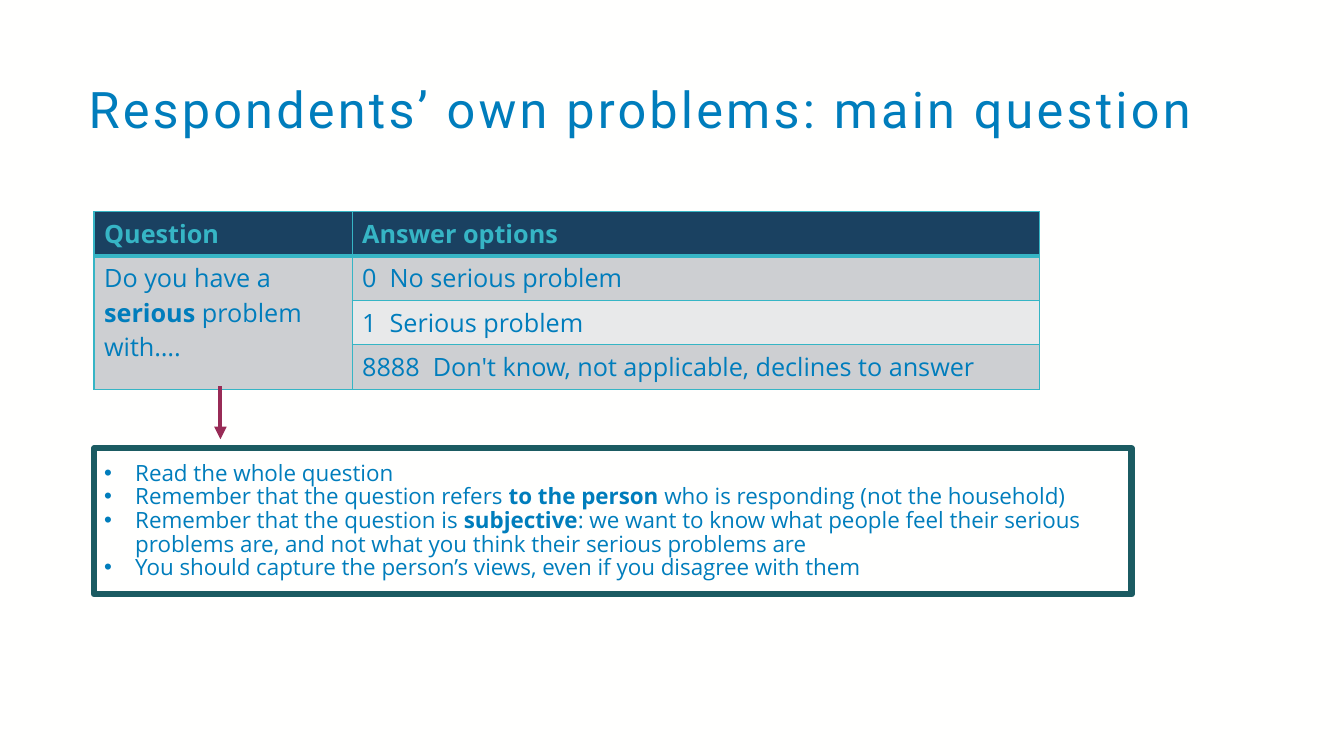
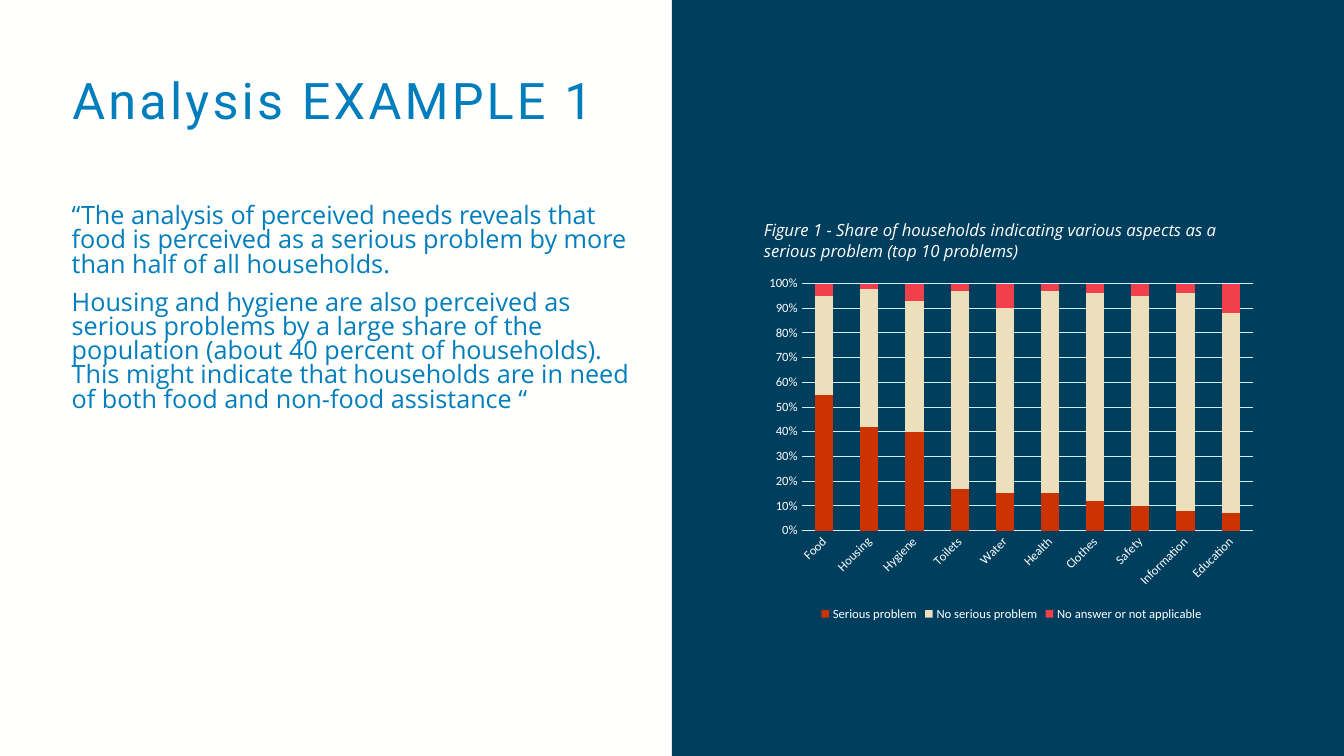
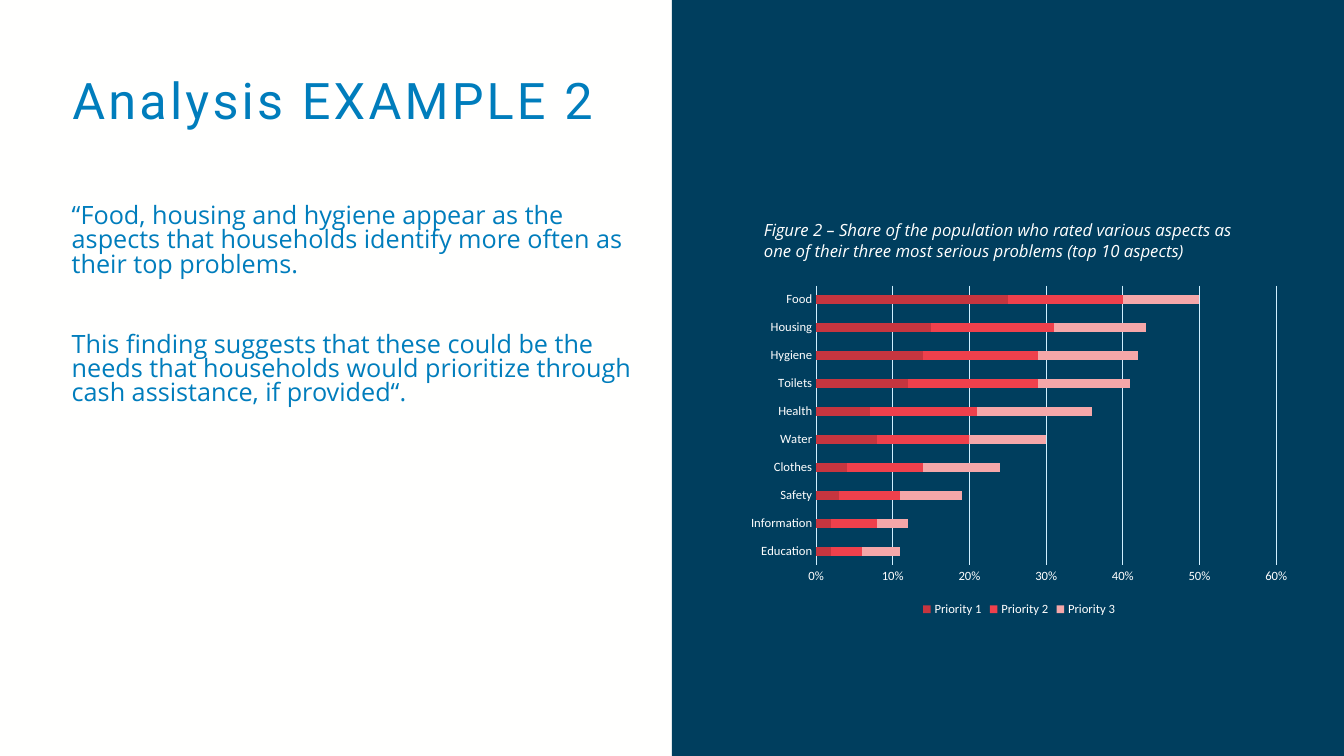
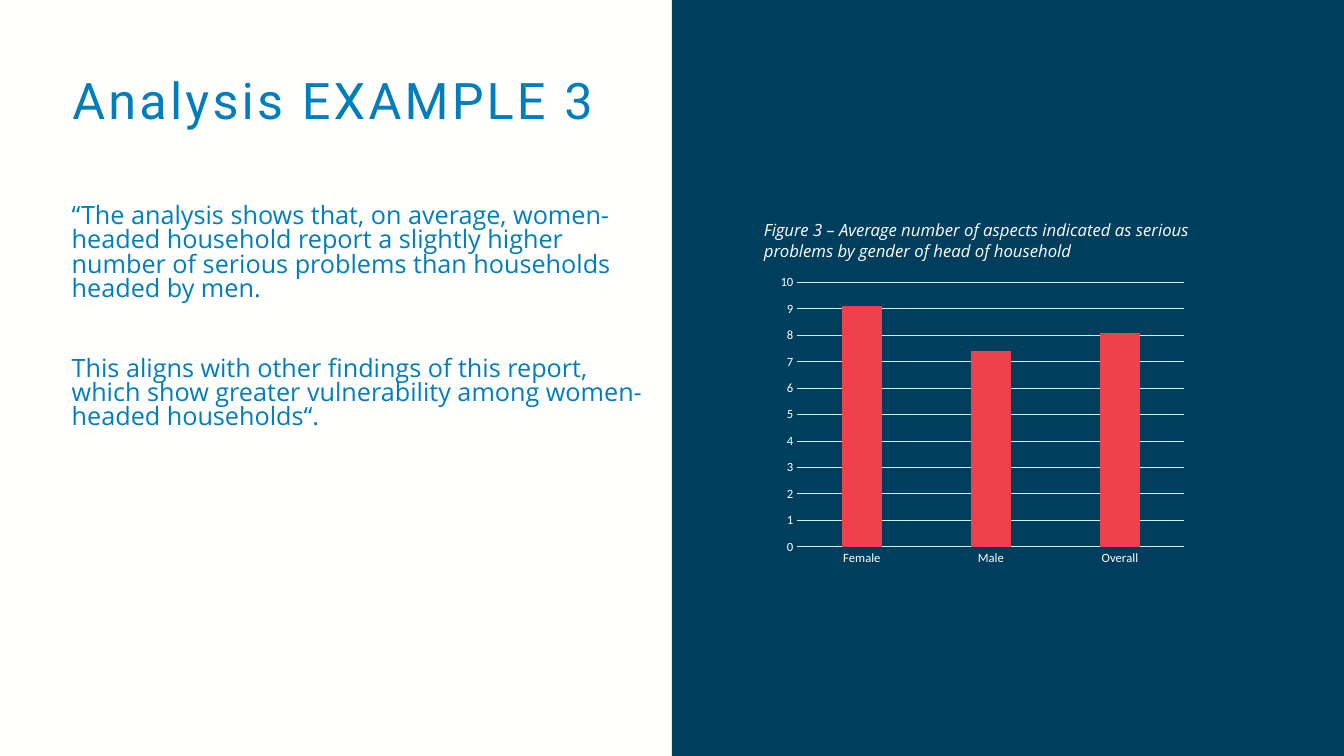
from lxml import etree
from pptx import Presentation
from pptx.chart.data import CategoryChartData
from pptx.dml.color import RGBColor
from pptx.enum.chart import XL_CHART_TYPE, XL_LEGEND_POSITION, XL_TICK_MARK
from pptx.enum.shapes import MSO_CONNECTOR, MSO_SHAPE
from pptx.enum.text import MSO_ANCHOR, PP_ALIGN
from pptx.oxml.ns import qn
from pptx.util import Inches, Pt

COLUMN_STACKED = XL_CHART_TYPE.COLUMN_STACKED
BAR_STACKED = XL_CHART_TYPE.BAR_STACKED
COLUMN_CLUSTERED = XL_CHART_TYPE.COLUMN_CLUSTERED
LEGEND_BOTTOM = XL_LEGEND_POSITION.BOTTOM
NO_TICK = XL_TICK_MARK.NONE
RECT = MSO_SHAPE.RECTANGLE
STRAIGHT = MSO_CONNECTOR.STRAIGHT
TOP, MIDDLE = MSO_ANCHOR.TOP, MSO_ANCHOR.MIDDLE
LEFT = PP_ALIGN.LEFT

PAPER = RGBColor(0xFF, 0xFF, 0xFE)
WHITE = RGBColor(0xFF, 0xFF, 0xFF)
BLUE = RGBColor(0x00, 0x7D, 0xBC)
NAVY = RGBColor(0x00, 0x3E, 0x5E)
HEADER = RGBColor(0x1A, 0x41, 0x61)
TEAL = RGBColor(0x36, 0xB5, 0xC5)
DARK_TEAL = RGBColor(0x1B, 0x5B, 0x62)
GREY = RGBColor(0xCD, 0xCF, 0xD2)
LIGHT_GREY = RGBColor(0xE8, 0xE9, 0xEA)
PLUM = RGBColor(0x98, 0x2B, 0x56)
GRID = RGBColor(0xCF, 0xEF, 0xFF)
ORANGE = RGBColor(0xCC, 0x33, 0x00)
SAND = RGBColor(0xEC, 0xDF, 0xBB)
DARK_RED = RGBColor(0xC6, 0x35, 0x3F)
RED = RGBColor(0xEF, 0x40, 0x4C)
PINK = RGBColor(0xF5, 0xA7, 0xA9)

TITLE_FONT, BODY_FONT, CHART_FONT = "Roboto", "Open Sans", "Calibri"


class Deck:
    def __init__(self):
        self.prs = Presentation()
        self.prs.slide_width, self.prs.slide_height = Inches(13.33), Inches(7.5)
        fill = self.prs.slide_master.background.fill
        fill.solid()
        fill.fore_color.rgb = PAPER
        self.s = None

    def x(self, share):
        return int(self.prs.slide_width * share / 100)

    def y(self, share):
        return int(self.prs.slide_height * share / 100)

    def box(self, left, top, width, height):
        return self.x(left), self.y(top), self.x(width), self.y(height)

    def slide(self):
        self.s = self.prs.slides.add_slide(self.prs.slide_layouts[6])

    def fill_text(self, tf, paragraphs, size, color, font=BODY_FONT, anchor=TOP,
                  spacing=1.0, gap=0, bold=False, italic=False, bullet=False, tracking=0):
        tf.word_wrap = True
        tf.vertical_anchor = anchor
        for i, runs in enumerate(paragraphs):
            p = tf.paragraphs[0] if i == 0 else tf.add_paragraph()
            p.alignment = LEFT
            p.line_spacing = spacing
            if i and gap:
                p.space_before = Pt(gap)
            if bullet:
                pPr = p._p.get_or_add_pPr()
                pPr.set("marL", str(Inches(0.31)))
                pPr.set("indent", str(-Inches(0.31)))
                etree.SubElement(pPr, qn("a:buFont"), typeface="Arial")
                etree.SubElement(pPr, qn("a:buChar"), char="•")
            for j, text in enumerate(runs):
                r = p.add_run()
                r.text = text
                f = r.font
                f.name, f.size, f.italic = font, Pt(size), italic
                f.bold = bold or j % 2 == 1
                f.color.rgb = color
                if tracking:
                    r._r.get_or_add_rPr().set("spc", str(tracking))

    def text(self, area, paragraphs, size, color, **style):
        sp = self.s.shapes.add_textbox(*self.box(*area))
        self.fill_text(sp.text_frame, paragraphs, size, color, **style)

    def title(self, text, left, top):
        self.text((left, top, 90.7, 9.6), [[text]], 36, BLUE, font=TITLE_FONT,
                  anchor=MIDDLE, spacing=0.9, tracking=230)

    def rect(self, area, fill=None, line=None, weight=0):
        sp = self.s.shapes.add_shape(RECT, *self.box(*area))
        sp.shadow.inherit = False
        if fill is None:
            sp.fill.background()
        else:
            sp.fill.solid()
            sp.fill.fore_color.rgb = fill
        if line is None:
            sp.line.fill.background()
        else:
            sp.line.color.rgb = line
            sp.line.width = Pt(weight)
        return sp

    def arrow(self, x, top, bottom):
        c = self.s.shapes.add_connector(STRAIGHT, self.x(x), self.y(top), self.x(x), self.y(bottom))
        c.line.color.rgb = PLUM
        c.line.width = Pt(3)
        spPr = c._element.spPr
        etree.SubElement(spPr.find(qn("a:ln")), qn("a:tailEnd"), type="triangle")
        etree.SubElement(spPr, qn("a:effectLst"))

    def cell(self, cell, runs, fill, header=False):
        tcPr = cell._tc.get_or_add_tcPr()
        for side in "LRTB":
            weight = 3 if header and side == "B" else 1
            ln = etree.SubElement(tcPr, qn("a:ln" + side), w=str(Pt(weight)))
            solid = etree.SubElement(ln, qn("a:solidFill"))
            etree.SubElement(solid, qn("a:srgbClr"), val=str(TEAL))
        cell.fill.solid()
        cell.fill.fore_color.rgb = fill
        if runs:
            self.fill_text(cell.text_frame, [runs], 18, TEAL if header else BLUE, bold=header)

    def table(self, left, top, widths, row_height, rows):
        area = self.box(left, top, sum(widths), row_height * len(rows))
        table = self.s.shapes.add_table(len(rows), len(widths), *area).table
        table.horz_banding = False
        for column, width in zip(table.columns, widths):
            column.width = self.x(width)
        table.cell(1, 0).merge(table.cell(len(rows) - 1, 0))
        for i, row in enumerate(rows):
            table.rows[i].height = self.y(row_height)
            for j, runs in enumerate(row):
                fill = HEADER if i == 0 else LIGHT_GREY if i == 2 else GREY
                self.cell(table.cell(i, j), runs, fill, header=i == 0)

    def chart_font(self, font, size=9):
        font.name, font.size, font.bold = CHART_FONT, Pt(size), False
        font.color.rgb = WHITE

    def chart(self, area, kind, cats, series, gap, overlap, fmt="0%", top=None, legend=True, slant=False):
        data = CategoryChartData(number_format=fmt)
        data.categories = cats
        for name, values, _ in series:
            data.add_series(name, values)
        chart = self.s.shapes.add_chart(kind, *self.box(*area), data).chart
        chart.has_title = False
        self.chart_font(chart.font, 10)
        chart.has_legend = legend
        if legend:
            chart.legend.position = LEGEND_BOTTOM
            chart.legend.include_in_layout = False
            self.chart_font(chart.legend.font)
        plot = chart.plots[0]
        plot.vary_by_categories = False
        plot.gap_width, plot.overlap = gap, overlap
        for ser, (_, _, color) in zip(plot.series, series):
            ser.format.fill.solid()
            ser.format.fill.fore_color.rgb = color
            ser.invert_if_negative = False
        cat, val = chart.category_axis, chart.value_axis
        for axis in (cat, val):
            axis.major_tick_mark = axis.minor_tick_mark = NO_TICK
            self.chart_font(axis.tick_labels.font)
        val.has_major_gridlines = True
        for line in (cat.format.line, val.major_gridlines.format.line):
            line.color.rgb = GRID
            line.width = Pt(0.75)
        val.format.line.fill.background()
        val.tick_labels.number_format = fmt
        val.tick_labels.number_format_is_linked = False
        val.minimum_scale = 0
        if top:
            val.maximum_scale = top
        if slant:
            cat._element.find(".//" + qn("a:bodyPr")).set("rot", "-2700000")

    def example(self, number, body, gap, caption):
        self.slide()
        self.rect((50, 0, 50, 100), NAVY)
        self.title(f"Analysis EXAMPLE {number}", 4.65, 8.9)
        sp = self.rect((56.1, 28, 37.3, 7.6), NAVY)
        self.fill_text(sp.text_frame, [[caption]], 12, PAPER, anchor=MIDDLE, italic=True)
        self.text((4.6, 26.5, 44.1, 57), [[text] for text in body], 18, BLUE, spacing=0.8, gap=gap)


def main():
    d = Deck()

    d.slide()
    d.title("Respondents’ own problems: main question", 5.85, 10.1)
    d.table(7, 28, (19.2, 51.15), 5.87, [
        (["Question"], ["Answer options"]),
        (["Do you have a ", "serious", " problem with…."], ["0  No serious problem"]),
        ([], ["1  Serious problem"]),
        ([], ["8888  Don't know, not applicable, declines to answer"]),
    ])
    sp = d.rect((7, 59.3, 77.2, 19.3), line=DARK_TEAL, weight=4.5)
    d.fill_text(sp.text_frame, [
        ["Read the whole question"],
        ["Remember that the question refers ", "to the person ",
         "who is responding (not the household)"],
        ["Remember that the question is ", "subjective",
         ": we want to know what people feel their serious problems are, "
         "and not what you think their serious problems are"],
        ["You should capture the person’s views, even if you disagree with them"],
    ], 16, BLUE, anchor=MIDDLE, spacing=0.88, bullet=True)
    d.arrow(16.4, 51.1, 58.1)

    d.example(1, [
        "“The analysis of perceived needs reveals that food is perceived as a serious problem "
        "by more than half of all households.",
        "Housing and hygiene are also perceived as serious problems by a large share of the "
        "population (about 40 percent of households). This might indicate that households "
        "are in need of both food and non-food assistance “",
    ], 10, "Figure 1 - Share of households indicating various aspects as a serious problem (top 10 problems)")
    d.chart((56.5, 35.6, 37.5, 47.1), COLUMN_STACKED,
            ["Food", "Housing", "Hygiene", "Toilets", "Water", "Health",
             "Clothes", "Safety", "Information", "Education"], [
        ("Serious problem",
         (0.55, 0.42, 0.4, 0.17, 0.15, 0.15, 0.12, 0.1, 0.08, 0.07), ORANGE),
        ("No serious problem",
         (0.4, 0.56, 0.53, 0.8, 0.75, 0.82, 0.84, 0.85, 0.88, 0.81), SAND),
        ("No answer or not applicable",
         (0.05, 0.02, 0.07, 0.03, 0.1, 0.03, 0.04, 0.05, 0.04, 0.12), RED),
    ], 150, 100, top=1, slant=True)

    d.example(2, [
        "“Food, housing and hygiene appear as the aspects that households identify more often "
        "as their top problems.",
        "This finding suggests that these could be the needs that households would prioritize "
        "through cash assistance, if provided“.",
    ], 40, "Figure 2 – Share of the population who rated various aspects as one of their "
           "three most serious problems (top 10 aspects)")
    d.chart((55.05, 36.9, 41.55, 45.2), BAR_STACKED,
            ["Education", "Information", "Safety", "Clothes", "Water", "Health",
             "Toilets", "Hygiene", "Housing", "Food"], [
        ("Priority 1", (0.02, 0.02, 0.03, 0.04, 0.08, 0.07, 0.12, 0.14, 0.15, 0.25), DARK_RED),
        ("Priority 2", (0.04, 0.06, 0.08, 0.1, 0.12, 0.14, 0.17, 0.15, 0.16, 0.15), RED),
        ("Priority 3", (0.05, 0.04, 0.08, 0.1, 0.1, 0.15, 0.12, 0.13, 0.12, 0.1), PINK),
    ], 219, 100)

    d.example(3, [
        "“The analysis shows that, on average, women-headed household report a slightly higher "
        "number of serious problems than households headed by men.",
        "This aligns with other findings of this report, which show greater vulnerability "
        "among women-headed households“.",
    ], 40, "Figure 3 – Average number of aspects indicated as serious problems by gender "
           "of head of household")
    d.chart((57.45, 35.6, 31.3, 40), COLUMN_CLUSTERED, ["Female", "Male", "Overall"],
            [("Series 1", (9.1, 7.4, 8.1), RED)], 219, -27, fmt="General", legend=False)

    d.prs.save("out.pptx")


if __name__ == "__main__":
    main()
